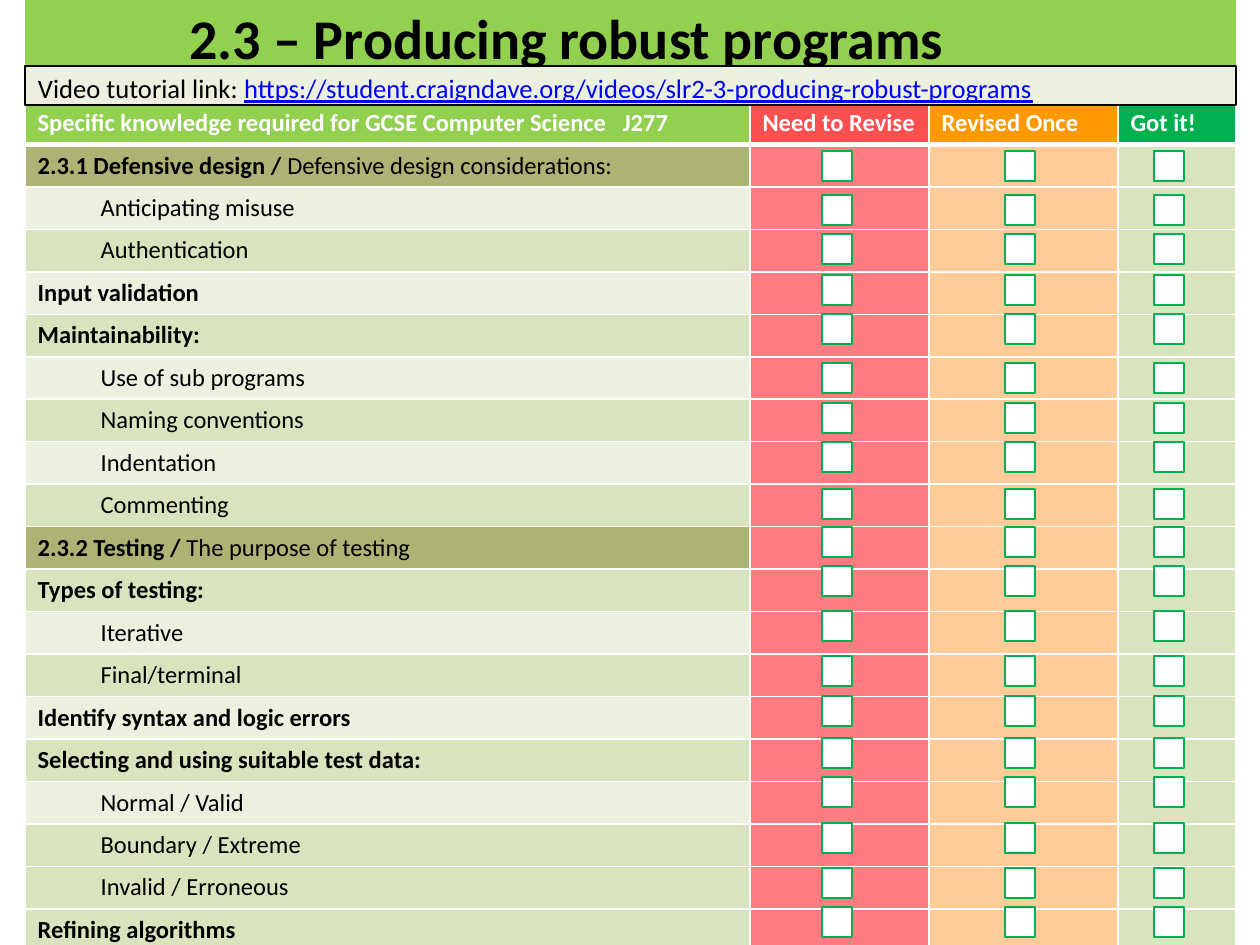
import dataclasses
import typing

import pptx
import pptx.dml.color
import pptx.enum.shapes
import pptx.enum.text
import pptx.oxml.ns
import pptx.util
from lxml import etree

EMU_PER_PX = 914400 / 126


@dataclasses.dataclass(frozen=True)
class Theme:
    font: str = "Calibri"
    title_size: float = 32
    link_size: float = 15.2
    table_size: float = 14
    black: str = "000000"
    white: str = "FFFFFF"
    link: str = "0000FF"
    banner: str = "92D050"
    section: str = "ADB375"
    light_band: str = "EBF1DE"
    dark_band: str = "D7E4BD"
    box_line: str = "00B050"


@dataclasses.dataclass(frozen=True)
class StatusColumn:
    heading: str
    heading_fill: str
    body_fill: str
    width: int
    box_left: int


@dataclasses.dataclass(frozen=True)
class Topic:
    box_top: int
    heading: str = ""
    detail: str = ""
    fill: str = ""


THEME = Theme()
LEFT, WIDTH = 25, 1211
TABLE_TOP, ROW_HEIGHT, TOPIC_WIDTH = 102, 40, 725
INDENT, CODE_TAB, BOX_SIZE = 63, 585, 30

STATUS_COLUMNS = [
    StatusColumn("Need to Revise", "FF5050", "FF7C80", 179, 822),
    StatusColumn("Revised Once", "FF9900", "FFCC99", 189, 1005),
    StatusColumn("Got it!", "00B050", THEME.dark_band, 118, 1154),
]
TOPICS = [
    Topic(151, "2.3.1 Defensive design / ", "Defensive design considerations:", THEME.section),
    Topic(195, detail="Anticipating misuse"),
    Topic(234, detail="Authentication"),
    Topic(275, "Input validation"),
    Topic(314, "Maintainability:"),
    Topic(363, detail="Use of sub programs"),
    Topic(403, detail="Naming conventions"),
    Topic(442, detail="Indentation"),
    Topic(489, detail="Commenting"),
    Topic(527, "2.3.2 Testing / ", "The purpose of testing", THEME.section),
    Topic(566, "Types of testing:"),
    Topic(611, detail="Iterative"),
    Topic(656, detail="Final/terminal"),
    Topic(696, "Identify syntax and logic errors"),
    Topic(738, "Selecting and using suitable test data:"),
    Topic(777, detail="Normal / Valid"),
    Topic(823, detail="Boundary / Extreme"),
    Topic(868, detail="Invalid / Erroneous", fill=THEME.dark_band),
    Topic(907, "Refining algorithms"),
]


def px(length: int) -> pptx.util.Emu:
    return pptx.util.Emu(round(length * EMU_PER_PX))


def rgb(color: str) -> pptx.dml.color.RGBColor:
    return pptx.dml.color.RGBColor.from_string(color)


def paint(target: typing.Any, color: str) -> None:
    target.fill.solid()
    target.fill.fore_color.rgb = rgb(color)


def add_text(paragraph: typing.Any, text: str, *, size: float = THEME.table_size,
             color: str = THEME.black, bold: bool = False, underline: bool = False) -> None:
    run = paragraph.add_run()
    run.text = text
    run.font.name = THEME.font
    run.font.size = pptx.util.Pt(size)
    run.font.bold = bold
    run.font.underline = underline
    run.font.color.rgb = rgb(color)


def set_frame(frame: typing.Any, right: int, top: int) -> None:
    """Anchor the text in the middle, with the given right and top insets."""
    frame.word_wrap = True
    frame.auto_size = pptx.enum.text.MSO_AUTO_SIZE.NONE
    frame.vertical_anchor = pptx.enum.text.MSO_ANCHOR.MIDDLE
    frame.margin_left, frame.margin_right = px(13), px(right)
    frame.margin_top, frame.margin_bottom = px(top), 0


def style_cell(cell: typing.Any, fill: str, top: int = 1, bottom: int = 1) -> None:
    """Give a cell its fill and white borders, widths in points."""
    properties = cell._tc.get_or_add_tcPr()
    for side, width in {"L": 1, "R": 1, "T": top, "B": bottom}.items():
        line = etree.SubElement(properties, pptx.oxml.ns.qn(f"a:ln{side}"),
                                w=str(pptx.util.Pt(width)))
        solid = etree.SubElement(line, pptx.oxml.ns.qn("a:solidFill"))
        etree.SubElement(solid, pptx.oxml.ns.qn("a:srgbClr"), val=THEME.white)
    paint(cell, fill)


def add_title(slide: typing.Any) -> None:
    title = slide.shapes.title
    title.left, title.top, title.width, title.height = px(LEFT), 0, px(WIDTH), px(68)
    paint(title, THEME.banner)
    set_frame(title.text_frame, right=141, top=6)
    paragraph = title.text_frame.paragraphs[0]
    paragraph.alignment = pptx.enum.text.PP_ALIGN.CENTER
    add_text(paragraph, "2.3 – Producing robust programs", size=THEME.title_size, bold=True)


def add_link_strip(slide: typing.Any) -> None:
    strip = slide.shapes.add_textbox(px(LEFT), px(66), px(WIDTH), px(39))
    paint(strip, THEME.light_band)
    strip.line.color.rgb = rgb(THEME.black)
    strip.line.width = pptx.util.Pt(1.5)
    set_frame(strip.text_frame, right=13, top=5)
    paragraph = strip.text_frame.paragraphs[0]
    add_text(paragraph, "Video tutorial link: ", size=THEME.link_size)
    add_text(paragraph, "https://student.craigndave.org/videos/slr2-3-producing-robust-programs",
             size=THEME.link_size, color=THEME.link, underline=True)


def fill_heading_row(table: typing.Any) -> None:
    headings = [("Specific knowledge required for GCSE Computer Science\tJ277", THEME.banner)]
    headings += [(column.heading, column.heading_fill) for column in STATUS_COLUMNS]
    for index, (text, fill) in enumerate(headings):
        cell = table.cell(0, index)
        style_cell(cell, fill, bottom=3)
        add_text(cell.text_frame.paragraphs[0], text, color=THEME.white, bold=True)
    properties = table.cell(0, 0).text_frame.paragraphs[0]._p.get_or_add_pPr()
    tabs = etree.SubElement(properties, pptx.oxml.ns.qn("a:tabLst"))
    etree.SubElement(tabs, pptx.oxml.ns.qn("a:tab"), pos=str(px(CODE_TAB)), algn="l")


def fill_topic_row(table: typing.Any, row: int, topic: Topic) -> None:
    top = 3 if row == 1 else 1
    band = THEME.dark_band if row % 2 or row == len(TOPICS) else THEME.light_band
    cell = table.cell(row, 0)
    style_cell(cell, topic.fill or band, top=top)
    paragraph = cell.text_frame.paragraphs[0]
    if topic.heading:
        add_text(paragraph, topic.heading, bold=True)
    else:
        paragraph.level = 1
        paragraph._p.get_or_add_pPr().set("marL", str(px(INDENT)))
    if topic.detail:
        add_text(paragraph, topic.detail)
    for index, column in enumerate(STATUS_COLUMNS, start=1):
        status = table.cell(row, index)
        style_cell(status, column.body_fill, top=top)
        status.text_frame.paragraphs[0].font.size = pptx.util.Pt(THEME.table_size)


def add_checklist(slide: typing.Any) -> None:
    widths = [TOPIC_WIDTH] + [column.width for column in STATUS_COLUMNS]
    rows = len(TOPICS) + 1
    table = slide.shapes.add_table(rows, len(widths), px(LEFT), px(TABLE_TOP),
                                   px(WIDTH), px(rows * ROW_HEIGHT)).table
    for column, width in zip(table.columns, widths):
        column.width = px(width)
    for row in table.rows:
        row.height = px(ROW_HEIGHT)
    fill_heading_row(table)
    for index, topic in enumerate(TOPICS, start=1):
        fill_topic_row(table, index, topic)


def add_tick_box(slide: typing.Any, left: int, top: int) -> None:
    box = slide.shapes.add_shape(pptx.enum.shapes.MSO_SHAPE.RECTANGLE,
                                 px(left), px(top), px(BOX_SIZE), px(BOX_SIZE))
    box.shadow.inherit = False
    paint(box, THEME.white)
    box.line.color.rgb = rgb(THEME.box_line)
    box.line.width = pptx.util.Pt(1.5)


def main() -> None:
    presentation = pptx.Presentation()
    presentation.slide_width, presentation.slide_height = px(1260), px(945)
    slide = presentation.slides.add_slide(presentation.slide_layouts.get_by_name("Title Only"))
    add_title(slide)
    add_checklist(slide)
    add_link_strip(slide)
    for topic in TOPICS:
        for column in STATUS_COLUMNS:
            add_tick_box(slide, column.box_left, topic.box_top)
    presentation.save("out.pptx")


if __name__ == "__main__":
    main()
